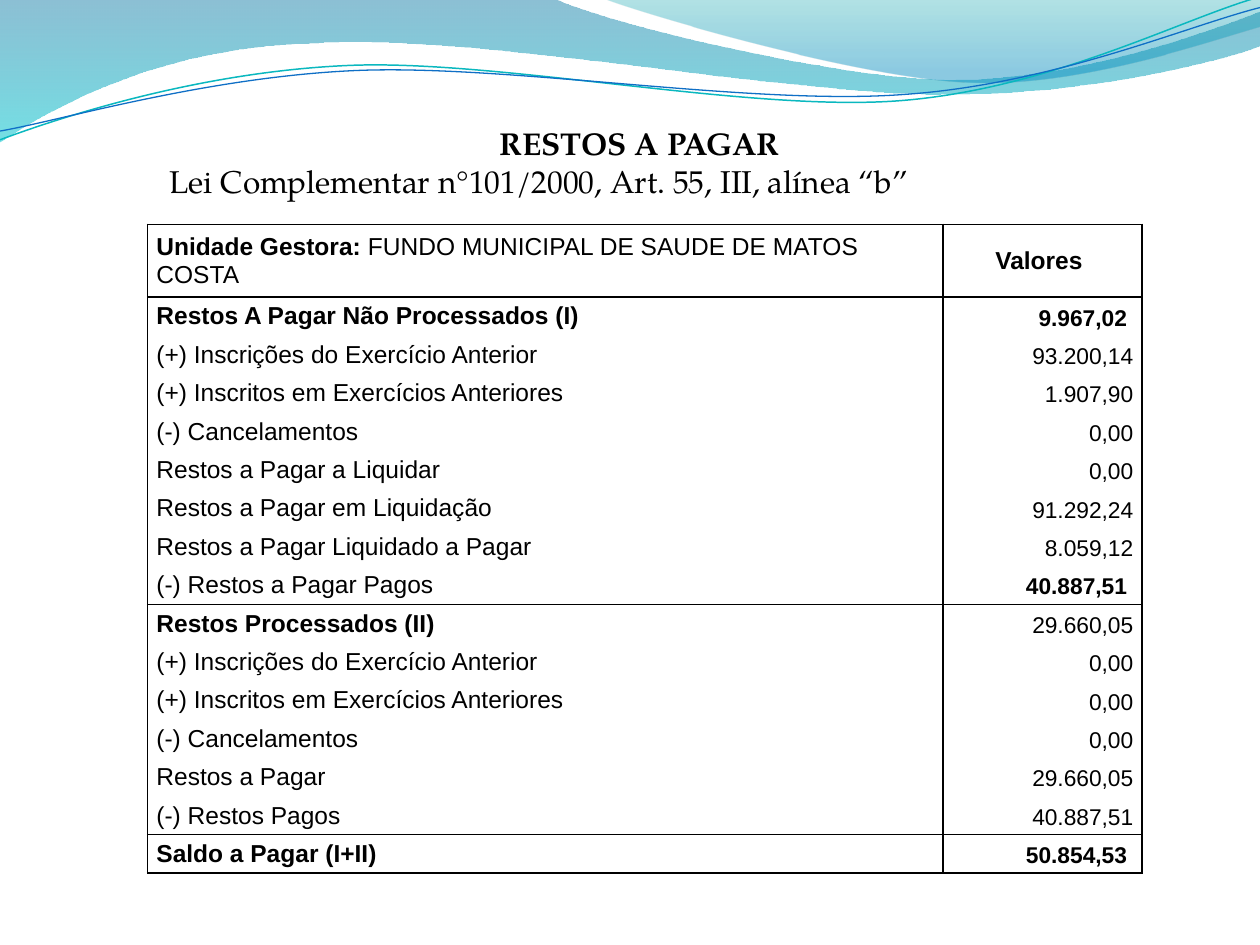
from math import cos, radians, sin

from lxml import etree
from pptx import Presentation, util as u
from pptx.dml.color import RGBColor
from pptx.enum import text
from pptx.oxml import ns

Pt = u.Pt
AL, ANC = text.PP_ALIGN, text.MSO_ANCHOR

THEME = dict(
    ink="000000", teal="0AB8BF", blue="0F6FC6",
    wave=[(0, "0074A1", 45), (1, "00C6CF", 55)],
    crest=[(0, "00A1A9", 30), (0.8, "008BBF", 45)],
    serif="TeX Gyre Pagella", sans="Arial",
    title=18, label=14, value=13, rule=1,
)

TITLE = ["RESTOS A PAGAR", "Lei Complementar n°101/2000, Art. 55, III, alínea “b”"]
HEADER = (["Unidade Gestora:", " FUNDO MUNICIPAL DE SAUDE DE MATOS COSTA"], "Valores ")
SECTIONS = [
    [
        ("Restos A Pagar Não Processados (I)", "9.967,02 "),
        ("(+) Inscrições do Exercício Anterior", "93.200,14"),
        ("(+) Inscritos em Exercícios Anteriores", "1.907,90"),
        ("(-) Cancelamentos", "0,00"),
        ("Restos a Pagar a Liquidar", "0,00"),
        ("Restos a Pagar em Liquidação", "91.292,24"),
        ("Restos a Pagar Liquidado a Pagar", "8.059,12"),
        ("(-) Restos a Pagar Pagos", "40.887,51 "),
    ],
    [
        ("Restos Processados (II)", "29.660,05"),
        ("(+) Inscrições do Exercício Anterior", "0,00"),
        ("(+) Inscritos em Exercícios Anteriores", "0,00"),
        ("(-) Cancelamentos", "0,00"),
        ("Restos a Pagar", "29.660,05"),
        ("(-) Restos Pagos", "40.887,51"),
    ],
    [("Saldo a Pagar (I+II)", "50.854,53 ")],
]
BOLD_VALUES = {"9.967,02 ", "40.887,51 ", "50.854,53 "}

TITLE_BOX = (89.7, 67.3, 551.5, 51)
TABLE_AT = (84.4, 128.2)
COLS = (454.4, 113.7)
HEADER_H, ROW_H = 41.6, 21.96

# Each segment is one point (straight) or three points (cubic curve).
WAVE_BOX = (-0.7, -0.7, 721.4, 82.1)
WAVE = [
    [(0, 0)], [(316.8, -0.7)],
    [(342.7, 12.2), (478.1, 45.4), (545.8, 45.4)],
    [(614.2, 45.4), (689.8, 18.7), (720, 6.5)],
    [(720.7, 25.9)],
    [(707.8, 31.7), (626.4, 54.7), (537.1, 54)],
    [(447.8, 54), (275, 20.2), (185, 24.5)],
    [(92.9, 25.9), (33.1, 59.8), (-0.7, 81.4)],
    [(0, 0)],
]
CREST_BOX = (344.9, -0.7, 375.1, 50.4)
CREST = [
    [(344.9, -0.7)],
    [(366.5, 7.9), (491, 44.6), (553.7, 46.8)],
    [(616.3, 49.7), (691.9, 23), (720, 15.1)],
    [(720, 0)], [(344.9, -0.7)],
]
LINE_TURN = -2.7
TEAL_BOX = (-1.4, 15.8, 721.4, 51.1)
TEAL_LINE = [
    [(0, 79.9)],
    [(34.6, 67), (113.8, 41), (199.4, 37.4)],
    [(284.4, 33.8), (427, 64.1), (513.4, 57.6)],
    [(599.8, 51.1), (675.4, 10.8), (718.6, -1.4)],
]
BLUE_BOX = (-1.4, 21.6, 722.2, 41.8)
BLUE_LINE = [
    [(0, 74.9)],
    [(33.8, 69.1), (118.1, 43.9), (203.8, 40.3)],
    [(290.2, 36.7), (429.8, 60.5), (516.2, 54)],
    [(601.9, 48.2), (677.5, 15.1), (720, 4.3)],
]


def rgb(c):
    return RGBColor.from_string(c)


def curve(s, box, segments, turn=0, close=False):
    x, y, w, h = box
    fb = s.shapes.build_freeform(x * 100, y * 100, scale=Pt(1) / 100)
    fb.add_line_segments([((x + w) * 100, (y + h) * 100)], close=False)
    sp = fb.convert_to_shape()
    sp.shadow.inherit = False
    sp.rotation = turn % 360
    outline = next(sp._element.spPr.iter(ns.qn("a:path")))
    for child in list(outline):
        outline.remove(child)
    c, n = cos(radians(turn)), sin(radians(turn))
    for i, seg in enumerate(segments):
        tag = "a:cubicBezTo" if len(seg) == 3 else "a:lnTo" if i else "a:moveTo"
        step = etree.SubElement(outline, ns.qn(tag))
        for px, py in seg:
            dx, dy = px - x - w / 2, py - y - h / 2
            lx, ly = w / 2 + dx * c + dy * n, h / 2 - dx * n + dy * c
            etree.SubElement(step, ns.qn("a:pt"), x=str(round(lx * 100)), y=str(round(ly * 100)))
    if close:
        etree.SubElement(outline, ns.qn("a:close"))
    return sp


def band(s, box, segments, stops):
    sp = curve(s, box, segments, close=True)
    sp.line.fill.background()
    sp.fill.gradient()
    sp.fill.gradient_angle = 270
    for stop, (pos, color, _) in zip(sp.fill.gradient_stops, stops):
        stop.position, stop.color.rgb = pos, rgb(color)
    for clr, (_, _, alpha) in zip(sp._element.spPr.iter(ns.qn("a:srgbClr")), stops):
        etree.SubElement(clr, ns.qn("a:alpha"), val=str(alpha * 1000))


def stroke(s, box, segments, color, width):
    sp = curve(s, box, segments, LINE_TURN)
    sp.fill.background()
    sp.line.color.rgb, sp.line.width = rgb(color), Pt(width)


def style(r, font, size, bold):
    f = r.font
    f.name, f.size, f.bold = font, Pt(size), bold
    f.color.rgb = rgb(THEME["ink"])


def borders(cell, top, bottom):
    tcPr = cell._tc.get_or_add_tcPr()
    for side, on in zip("LRTB", (True, True, top, bottom)):
        ln = etree.SubElement(tcPr, ns.qn("a:ln" + side), w=str(Pt(THEME["rule"])))
        fill = etree.SubElement(ln, ns.qn("a:solidFill" if on else "a:noFill"))
        if on:
            etree.SubElement(fill, ns.qn("a:srgbClr"), val=THEME["ink"])


def fill_cell(cell, runs, size, align, spacing, top, bottom):
    borders(cell, top, bottom)
    cell.fill.background()
    cell.vertical_anchor = ANC.MIDDLE
    cell.margin_left = cell.margin_right = Pt(5)
    cell.margin_top = cell.margin_bottom = Pt(0.7)
    p = cell.text_frame.paragraphs[0]
    p.alignment, p.line_spacing = align, spacing
    for words, bold in runs:
        r = p.add_run()
        r.text = words
        style(r, THEME["sans"], size, bold)


def add_title(s):
    sp = s.shapes.title
    sp.left, sp.top, sp.width, sp.height = map(Pt, TITLE_BOX)
    tf = sp.text_frame
    tf.text = "\n".join(TITLE)
    tf.word_wrap, tf.vertical_anchor = True, ANC.TOP
    tf.auto_size = text.MSO_AUTO_SIZE.NONE
    for p, align, bold in zip(tf.paragraphs, (AL.CENTER, AL.LEFT), (True, False)):
        p.alignment = align
        style(p.runs[0], THEME["serif"], THEME["title"], bold)


def add_balance(s):
    n = 1 + sum(map(len, SECTIONS))
    size = (sum(COLS), HEADER_H + ROW_H * (n - 1))
    tbl = s.shapes.add_table(n, 2, *map(Pt, TABLE_AT + size)).table
    tbl.first_row = tbl.horz_banding = False
    for col, w in zip(tbl.columns, COLS):
        col.width = Pt(w)
    for i, row in enumerate(tbl.rows):
        row.height = Pt(ROW_H if i else HEADER_H)
    names, value = HEADER
    fill_cell(tbl.cell(0, 0), zip(names, (True, False)), THEME["label"], AL.LEFT, 1.0, True, True)
    fill_cell(tbl.cell(0, 1), [(value, True)], THEME["label"], AL.CENTER, 1.0, True, True)
    i = 1
    for rows in SECTIONS:
        for k, (label, value) in enumerate(rows):
            edges = (k == 0, k == len(rows) - 1)
            fill_cell(tbl.cell(i, 0), [(label, k == 0)], THEME["label"], AL.LEFT, 1.0, *edges)
            fill_cell(tbl.cell(i, 1), [(value, value in BOLD_VALUES)],
                      THEME["value"], AL.RIGHT, 1.15, *edges)
            i += 1


def main():
    prs = Presentation()
    prs.slide_width, prs.slide_height = Pt(720), Pt(540)
    s = prs.slides.add_slide(prs.slide_layouts[5])
    band(s, WAVE_BOX, WAVE, THEME["wave"])
    band(s, CREST_BOX, CREST, THEME["crest"])
    stroke(s, TEAL_BOX, TEAL_LINE, THEME["teal"], 0.85)
    stroke(s, BLUE_BOX, BLUE_LINE, THEME["blue"], 0.75)
    add_title(s)
    add_balance(s)
    prs.save("out.pptx")


if __name__ == "__main__":
    main()
